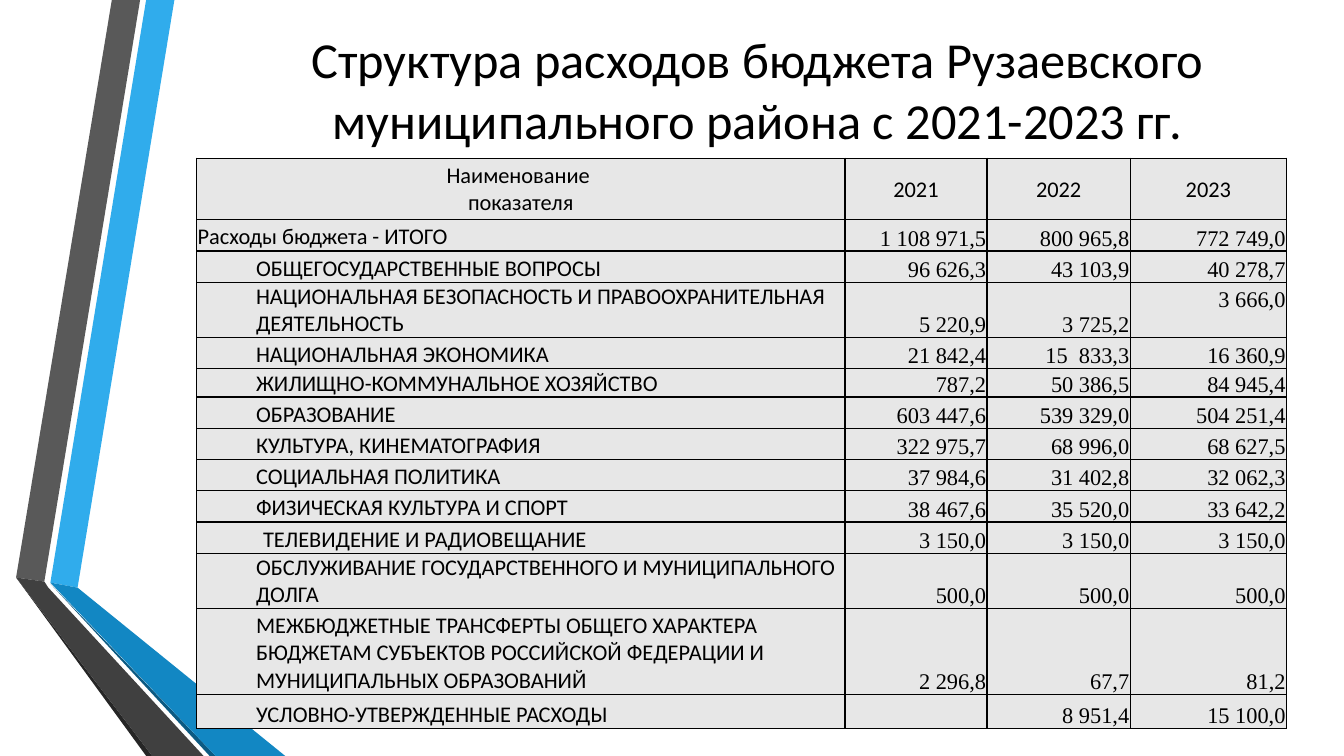
from dataclasses import dataclass

from lxml.etree import SubElement
from pptx import Presentation
from pptx.dml.color import RGBColor
from pptx.enum.text import MSO_ANCHOR, PP_ALIGN
from pptx.oxml.ns import qn
from pptx.util import Inches, Pt


@dataclass(frozen=True)
class Theme:
    ink: str = "000000"
    cell: str = "E7E7E7"
    sky: str = "30ACEC"
    blue: str = "1287C3"
    navy: str = "0C5A82"
    gray: str = "595959"
    dark: str = "404040"
    coal: str = "262626"
    sans: str = "Calibri"
    serif: str = "Times New Roman"
    head: int = 36
    body: int = 16
    rule: int = 1


theme = Theme()


def write(frame, text, font, size, align):
    """Fill the first paragraph of a frame and return it."""
    para = frame.paragraphs[0]
    para.text = text
    para.alignment = align
    for run in para.runs:
        run.font.name = font
        run.font.size = Pt(size)
        run.font.color.rgb = RGBColor.from_string(theme.ink)
    return para


def frame_cell(cell):
    """Draw the four borders of a cell, then its fill."""
    props = cell._tc.get_or_add_tcPr()
    for side in ("a:lnL", "a:lnR", "a:lnT", "a:lnB"):
        line = SubElement(props, qn(side), w=str(Pt(theme.rule)))
        fill = SubElement(line, qn("a:solidFill"))
        SubElement(fill, qn("a:srgbClr"), val=theme.ink)
    cell.fill.solid()
    cell.fill.fore_color.rgb = RGBColor.from_string(theme.cell)


deck = Presentation()
deck.slide_width = Inches(13.33)
deck.slide_height = Inches(7.5)
slide = deck.slides.add_slide(deck.slide_layouts[6])

# Folded ribbons on the left, back to front
bands = [
    (theme.sky, [(0.5, 5.78), (0.77, 5.83), (1.73, 0), (1.45, 0)]),
    (theme.gray, [(1.39, 0), (1.11, 0), (0.16, 5.73), (0.44, 5.77)]),
    (theme.coal, [(0.16, 5.73), (1.45, 7.5), (1.51, 7.5)]),
    (theme.navy, [(0.5, 5.79), (2.08, 7.5), (2.14, 7.5)]),
    (theme.blue, [(0.5, 5.78), (2.14, 7.5), (2.83, 7.5), (0.77, 5.83)]),
    (theme.dark, [(2.02, 7.5), (0.48, 5.83), (0.44, 5.77), (0.16, 5.73),
                  (1.51, 7.5)]),
]
for color, spots in bands:
    spots = [(Inches(x), Inches(y)) for x, y in spots]
    pen = slide.shapes.build_freeform(*spots[0])
    pen.add_line_segments(spots[1:], close=True)
    band = pen.convert_to_shape()
    band.shadow.inherit = False
    band.fill.solid()
    band.fill.fore_color.rgb = RGBColor.from_string(color)
    band.line.fill.background()

title = slide.shapes.add_textbox(
    Inches(1.82), Inches(0.19), Inches(11.39), Inches(1.38)).text_frame
title.word_wrap = True
title.vertical_anchor = MSO_ANCHOR.MIDDLE
write(title, "Структура расходов бюджета Рузаевского муниципального района "
      "с 2021-2023 гг.", theme.sans, theme.head, PP_ALIGN.CENTER)

# Row height, text indent, then the four cells
rows = [
    (0.61, 0, "Наименование \vпоказателя", "2021", "2022", "2023"),
    (0.31, 0, "Расходы бюджета - ИТОГО",
     "1 108 971,5", "800 965,8", "772 749,0"),
    (0.31, 0.5, "ОБЩЕГОСУДАРСТВЕННЫЕ ВОПРОСЫ",
     "96 626,3", "43 103,9", "40 278,7"),
    (0.55, 0.5, "НАЦИОНАЛЬНАЯ БЕЗОПАСНОСТЬ И ПРАВООХРАНИТЕЛЬНАЯ ДЕЯТЕЛЬНОСТЬ",
     "5 220,9", "3 725,2", "3 666,0"),
    (0.31, 0.5, "НАЦИОНАЛЬНАЯ ЭКОНОМИКА",
     "21 842,4", "15  833,3", "16 360,9"),
    (0.28, 0.5, "ЖИЛИЩНО-КОММУНАЛЬНОЕ ХОЗЯЙСТВО",
     "787,2", "50 386,5", "84 945,4"),
    (0.31, 0.5, "ОБРАЗОВАНИЕ", "603 447,6", "539 329,0", "504 251,4"),
    (0.31, 0.5, "КУЛЬТУРА, КИНЕМАТОГРАФИЯ",
     "322 975,7", "68 996,0", "68 627,5"),
    (0.31, 0.5, "СОЦИАЛЬНАЯ ПОЛИТИКА", "37 984,6", "31 402,8", "32 062,3"),
    (0.31, 0.5, "ФИЗИЧЕСКАЯ КУЛЬТУРА И СПОРТ",
     "38 467,6", "35 520,0", "33 642,2"),
    (0.31, 0.57, "ТЕЛЕВИДЕНИЕ И РАДИОВЕЩАНИЕ",
     "3 150,0", "3 150,0", "3 150,0"),
    (0.55, 0.5, "ОБСЛУЖИВАНИЕ ГОСУДАРСТВЕННОГО И МУНИЦИПАЛЬНОГО ДОЛГА",
     "500,0", "500,0", "500,0"),
    (0.85, 0.5, "МЕЖБЮДЖЕТНЫЕ ТРАНСФЕРТЫ ОБЩЕГО ХАРАКТЕРА БЮДЖЕТАМ СУБЪЕКТОВ "
     "РОССИЙСКОЙ ФЕДЕРАЦИИ И МУНИЦИПАЛЬНЫХ ОБРАЗОВАНИЙ",
     "2 296,8", "67,7", "81,2"),
    (0.34, 0.5, "УСЛОВНО-УТВЕРЖДЕННЫЕ РАСХОДЫ", "", "8 951,4", "15 100,0"),
]
widths = [6.43, 1.41, 1.42, 1.55]
table = slide.shapes.add_table(
    len(rows), len(widths), Inches(1.95), Inches(1.57),
    Inches(sum(widths)), Inches(sum(row[0] for row in rows))).table
table.first_row = False
table.horz_banding = False
for col, width in zip(table.columns, widths):
    col.width = Inches(width)

for r, (height, indent, *texts) in enumerate(rows):
    table.rows[r].height = Inches(height)
    for c, text in enumerate(texts):
        cell = table.cell(r, c)
        cell.margin_left = Inches(0.09 if indent and c == 0 else 0.01)
        cell.margin_right = cell.margin_top = Inches(0.01)
        cell.margin_bottom = 0
        cell.vertical_anchor = MSO_ANCHOR.MIDDLE if r == 0 else MSO_ANCHOR.BOTTOM
        if r == 0:
            align = PP_ALIGN.CENTER
        else:
            align = PP_ALIGN.RIGHT if c else PP_ALIGN.LEFT
        font = theme.serif if r and c else theme.sans
        para = write(cell.text_frame, text, font, theme.body, align)
        if indent and c == 0:
            para._p.get_or_add_pPr().set("marL", str(Inches(indent)))
        frame_cell(cell)

# The last security figure sits one line above its neighbours
table.cell(3, 3).margin_bottom = Inches(0.25)

deck.save("out.pptx")
